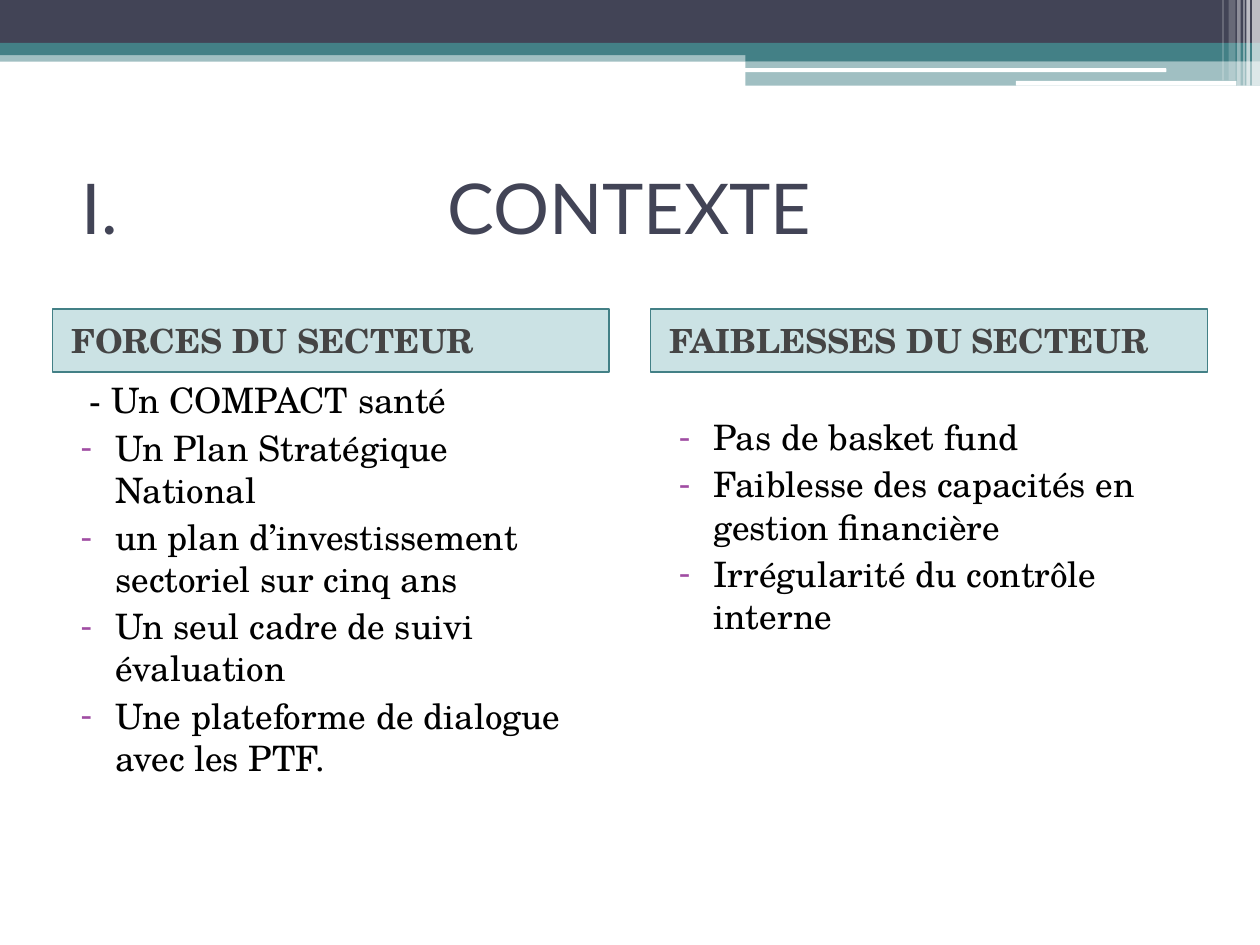
import pptx
import pptx.dml.color
import pptx.enum.shapes
import pptx.enum.text
import pptx.util
from lxml import etree
from pptx.oxml.ns import qn

RECTANGLE = pptx.enum.shapes.MSO_SHAPE.RECTANGLE
ROUNDED = pptx.enum.shapes.MSO_SHAPE.ROUNDED_RECTANGLE
MIDDLE = pptx.enum.text.MSO_ANCHOR.MIDDLE
TOP = pptx.enum.text.MSO_ANCHOR.TOP

NAVY, TEAL, WHITE = "424456", "438086", "FFFFFF"
SERIF, SANS = "TeX Gyre Schola", "Lato"
COLUMN_WIDTH = 318.25

BANDS = [
    (0, 28.8, 720, 6.5, TEAL, 50),
    (0, 0, 720, 24.5, NAVY, 100),
    (0, 24.5, 720, 7, TEAL, 100),
    (426, 28, 294, 7, TEAL, 100),
    (426, 35, 294, 14, TEAL, 50),
]
HIGHLIGHTS = [(425.5, 39, 241, 2.2), (580.5, 46.2, 126, 2.7)]
STRIPES = [
    (715.5, 4.5, 49, 65),
    (712.25, 2, 49, 65),
    (710.5, 0.7, 49, 60),
    (707, 2, 49, 40),
    (702, 4, 46, 20),
    (698.5, 0.7, 46, 30),
]
COLUMNS = [
    (30, 213, "FORCES DU SECTEUR", [
        (" - Un COMPACT santé", False),
        ("Un Plan Stratégique National", True),
        ("un plan d’investissement sectoriel sur cinq ans", True),
        ("Un seul cadre de suivi évaluation", True),
        ("Une plateforme de dialogue avec les PTF.", True),
    ]),
    (371.75, 234, "FAIBLESSES DU SECTEUR", [
        ("Pas de basket fund", True),
        ("Faiblesse des capacités en gestion financière", True),
        ("Irrégularité du contrôle interne", True),
    ]),
]


def color(value):
    return pptx.dml.color.RGBColor.from_string(value)


def points(*values):
    return [pptx.util.Pt(value) for value in values]


def add_block(slide, left, top, width, height, fill, opacity=100, kind=RECTANGLE, line=None):
    shape = slide.shapes.add_shape(kind, *points(left, top, width, height))
    shape.shadow.inherit = False
    shape.fill.solid()
    shape.fill.fore_color.rgb = color(fill)
    if opacity < 100:
        rgb = shape.fill._xPr.find(".//" + qn("a:srgbClr"))
        etree.SubElement(rgb, qn("a:alpha"), val=str(opacity * 1000))
    if line:
        shape.line.color.rgb = color(line)
        shape.line.width = pptx.util.Pt(1)
    else:
        shape.line.fill.background()
    return shape


def prepare_frame(shape, anchor, right_margin=7.2):
    frame = shape.text_frame
    frame.word_wrap = True
    frame.vertical_anchor = anchor
    frame.margin_right = pptx.util.Pt(right_margin)
    return frame


def add_text_box(slide, left, top, width, height, anchor=TOP, right_margin=7.2):
    shape = slide.shapes.add_textbox(*points(left, top, width, height))
    return prepare_frame(shape, anchor, right_margin)


def set_bullet(properties, kind, value, bullet_color):
    tint = etree.SubElement(properties, qn("a:buClr"))
    etree.SubElement(tint, qn("a:srgbClr"), val=bullet_color)
    etree.SubElement(properties, qn("a:buFont"), typeface=SANS)
    attribute = "char" if kind == "buChar" else "type"
    etree.SubElement(properties, qn("a:" + kind), {attribute: value})


def write_text(paragraph, text, *, size, font, text_color, bold=False, margin=0,
               indent=0, before=0, bullet=None):
    paragraph.alignment = pptx.enum.text.PP_ALIGN.LEFT
    paragraph.space_before = pptx.util.Pt(before)
    properties = paragraph._p.get_or_add_pPr()
    properties.set("marL", str(pptx.util.Pt(margin)))
    properties.set("indent", str(pptx.util.Pt(indent)))
    if bullet:
        set_bullet(properties, *bullet)
    run = paragraph.add_run()
    run.text = text
    run.font.size = pptx.util.Pt(size)
    run.font.name = font
    run.font.bold = bold
    run.font.color.rgb = color(text_color)


def add_banner(slide):
    for band in BANDS:
        add_block(slide, *band)
    for highlight in HIGHLIGHTS:
        add_block(slide, *highlight, WHITE, kind=ROUNDED)
    for left, width, height, opacity in STRIPES:
        add_block(slide, left, 0, width, height, WHITE, opacity)


def add_title(slide):
    frame = add_text_box(slide, 39.6, 90, 651, 56, MIDDLE)
    write_text(frame.paragraphs[0], "CONTEXTE", size=40, font=SANS, text_color=NAVY,
               margin=209, indent=-209, bullet=("buAutoNum", "romanUcPeriod", NAVY))


def add_column(slide, left, list_top, heading, items):
    header = add_block(slide, left, 176.5, COLUMN_WIDTH, 36, "328E97", 25, line=TEAL)
    frame = prepare_frame(header, MIDDLE)
    write_text(frame.paragraphs[0], heading, size=19, font=SERIF, text_color="454545",
               bold=True, margin=3.6, before=3)

    frame = add_text_box(slide, left, list_top, COLUMN_WIDTH, 306, right_margin=12)
    for index, (text, bulleted) in enumerate(items):
        paragraph = frame.add_paragraph() if index else frame.paragraphs[0]
        write_text(paragraph, text, size=20, font=SERIF, text_color="000000",
                   margin=28.8, indent=-20.2, before=3,
                   bullet=("buChar", "-", "A04DA3") if bulleted else None)


def main():
    presentation = pptx.Presentation()
    presentation.slide_width, presentation.slide_height = points(720, 540)
    slide = presentation.slides.add_slide(presentation.slide_layouts[6])
    add_banner(slide)
    add_title(slide)
    for column in COLUMNS:
        add_column(slide, *column)
    presentation.save("out.pptx")


if __name__ == "__main__":
    main()
